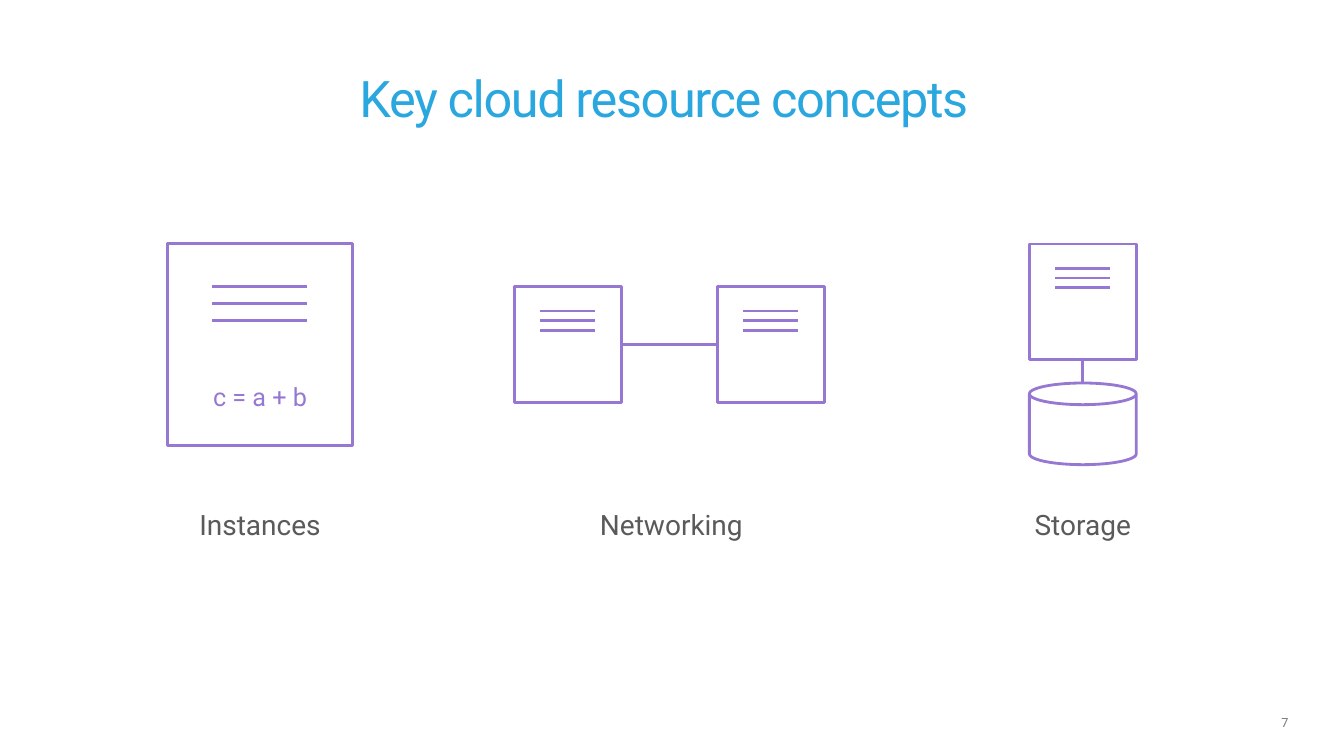
"""Builds the slide on key cloud resource concepts."""
from lxml.etree import SubElement
from pptx import Presentation
from pptx.dml.color import RGBColor
from pptx.enum.shapes import MSO_CONNECTOR, MSO_SHAPE
from pptx.enum.text import MSO_ANCHOR, PP_ALIGN
from pptx.oxml.ns import qn
from pptx.util import Inches, Pt

COLORS = {"title": "29A7DE", "label": "595B59", "drawing": "9678D3", "number": "7A7A7A"}
FONT = "Roboto"
SLIDE_WIDTH, SLIDE_HEIGHT = 13.33, 7.5
COLUMN_LEFT, COLUMN_WIDTH, COLUMN_PITCH = 0.68, 3.8, 4.08
LABELS = ["Instances", "Networking", "Storage"]
LARGE, SMALL = (1.84, 2), (1.06, 1.15)
LINE_START, LINE_END = 0.24, 0.755
FIRST_LINE, LINE_STEP = 0.21, 0.084


def column_center(column):
    """Return the horizontal centre of a column."""
    return COLUMN_LEFT + column * COLUMN_PITCH + COLUMN_WIDTH / 2


def style_line(shape):
    """Give a shape or connector the drawing outline."""
    shape.line.color.rgb = RGBColor.from_string(COLORS["drawing"])
    shape.line.width = Pt(2)


def write_text(shape, text, size, color, align=PP_ALIGN.CENTER, anchor=MSO_ANCHOR.TOP):
    """Write one formatted paragraph into a shape and return it."""
    frame = shape.text_frame
    frame.word_wrap = True
    frame.vertical_anchor = anchor
    frame.text = text
    paragraph = frame.paragraphs[0]
    paragraph.alignment = align
    font = paragraph.runs[0].font
    font.name, font.size = FONT, Pt(size)
    font.color.rgb = RGBColor.from_string(COLORS[color])
    return paragraph


def add_text(slide, box, *style):
    """Add a text box and return its paragraph."""
    return write_text(slide.shapes.add_textbox(*map(Inches, box)), *style)


def add_outline(shapes, kind, box):
    """Add an unfilled preset shape with the drawing outline."""
    shape = shapes.add_shape(kind, *map(Inches, box))
    shape.shadow.inherit = False
    shape.fill.background()
    style_line(shape)
    return shape


def add_line(shapes, *ends):
    """Add a straight line between two points."""
    line = shapes.add_connector(MSO_CONNECTOR.STRAIGHT, *map(Inches, ends))
    style_line(line)
    SubElement(line._element.spPr, qn("a:effectLst"))


def add_document(slide, center, top, size):
    """Add a grouped page with three text lines and return the page."""
    width, height = size
    left = center - width / 2
    shapes = slide.shapes.add_group_shape().shapes
    page = add_outline(shapes, MSO_SHAPE.RECTANGLE, (left, top, width, height))
    for row in range(3):
        y = top + height * (FIRST_LINE + row * LINE_STEP)
        add_line(shapes, left + width * LINE_START, y, left + width * LINE_END, y)
    return page


def add_title(slide, text):
    """Add the slide title."""
    box = (SLIDE_WIDTH * 0.03, 0.69, SLIDE_WIDTH * 0.928, 0.66)
    paragraph = add_text(slide, box, text, 36, "title", PP_ALIGN.CENTER, MSO_ANCHOR.MIDDLE)
    paragraph.line_spacing = 0.8
    paragraph.runs[0].font._element.set("spc", "-100")


def add_number(slide, text):
    """Add the slide number in the bottom right corner."""
    box = (12.41, 7.06, 0.37, 0.22)
    paragraph = add_text(slide, box, text, 9, "number", PP_ALIGN.RIGHT, MSO_ANCHOR.MIDDLE)
    frame = paragraph._parent
    frame.margin_left = frame.margin_right = frame.margin_top = frame.margin_bottom = 0


def add_instance(slide, center):
    """Add the large page that holds a formula."""
    page = add_document(slide, center, 2.42, LARGE)
    write_text(page, "c = a + b", 18, "drawing", PP_ALIGN.CENTER, MSO_ANCHOR.BOTTOM)
    page.text_frame.margin_bottom = Inches(0.34)


def add_network(slide, center):
    """Add two small pages joined by a line."""
    width, height = SMALL
    top, spread = 2.845, 1.005
    add_line(slide.shapes, center - spread + width / 2, top + height / 2,
             center + spread - width / 2, top + height / 2)
    for side in (-1, 1):
        add_document(slide, center + side * spread, top, SMALL)


def add_storage(slide, center):
    """Add a small page joined to a disk below it."""
    width, height = SMALL
    page_top, disk_top = 2.42, 3.8
    disk = add_outline(slide.shapes, MSO_SHAPE.CAN, (center - width / 2, disk_top, width, 0.81))
    disk.adjustments[0] = 0.265
    add_line(slide.shapes, center, page_top + height, center, disk_top)
    add_document(slide, center, page_top, SMALL)


def main():
    """Build and save the slide."""
    presentation = Presentation()
    presentation.slide_width = Inches(SLIDE_WIDTH)
    presentation.slide_height = Inches(SLIDE_HEIGHT)
    slide = presentation.slides.add_slide(presentation.slide_layouts[6])
    add_title(slide, "Key cloud resource concepts")
    for column, label in enumerate(LABELS):
        left = COLUMN_LEFT + column * COLUMN_PITCH
        add_text(slide, (left, 4.99, COLUMN_WIDTH, 1.24), label, 20, "label")
    add_instance(slide, column_center(0))
    add_network(slide, column_center(1) - 0.02)
    add_storage(slide, column_center(2))
    add_number(slide, "7")
    presentation.save("out.pptx")


if __name__ == "__main__":
    main()
